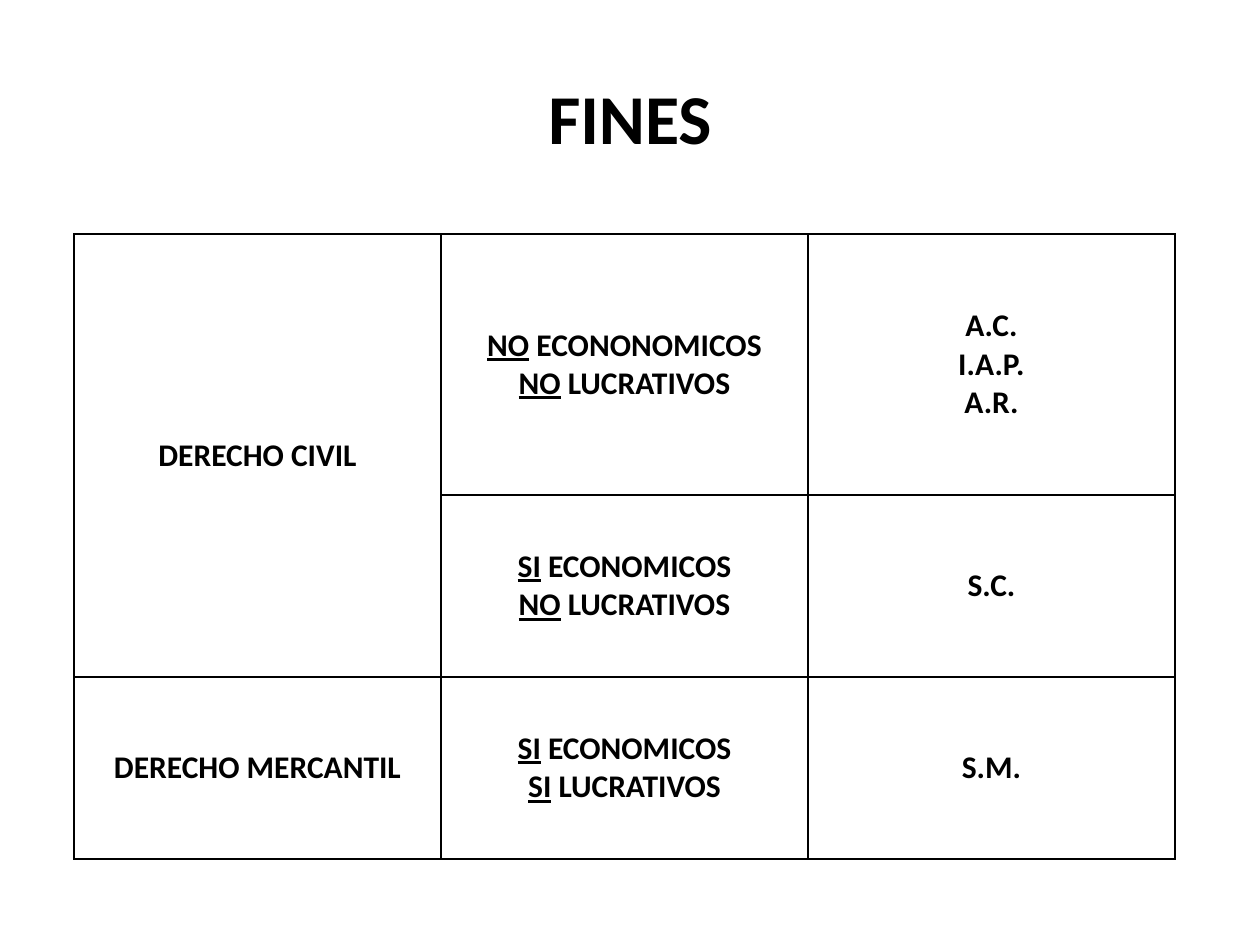
from lxml.etree import SubElement
from pptx import Presentation
from pptx.dml.color import RGBColor
from pptx.enum.text import MSO_ANCHOR, PP_ALIGN
from pptx.oxml.ns import qn
from pptx.util import Pt

EMU_PER_PX = 914400 / 126
SLIDE_SIZE = (1260, 945)
TITLE_BOX = (63, 38, 1134, 158)
TABLE_CORNER = (74, 234)
COLUMN_WIDTHS = [367] * 3
ROW_HEIGHTS = [261, 182, 182]

# Each cell is a list of lines; each line is (underlined word, plain text).
PURPOSES = [
    [[("", "DERECHO CIVIL")],
     [("NO", " ECONONOMICOS"), ("NO", " LUCRATIVOS")],
     [("", "A.C."), ("", "I.A.P."), ("", "A.R.")]],
    [[],
     [("SI", " ECONOMICOS"), ("NO", " LUCRATIVOS")],
     [("", "S.C.")]],
    [[("", "DERECHO MERCANTIL")],
     [("SI", " ECONOMICOS"), ("SI", " LUCRATIVOS")],
     [("", "S.M.")]],
]


def px(length):
    return round(length * EMU_PER_PX)


def color(hex_string):
    return RGBColor.from_string(hex_string)


class SlideBuilder:
    font_name = "Calibri"
    ink = "000000"
    paper = "FFFFFF"
    title_size = 40
    cell_size = 18
    border_width = 1

    def __init__(self, slide):
        self.slide = slide

    def style_run(self, run, size, underline=False):
        font = run.font
        font.name = self.font_name
        font.size = Pt(size)
        font.bold = True
        font.underline = underline
        font.color.rgb = color(self.ink)

    def write_lines(self, frame, lines, size):
        frame.text = "\n".join([""] * len(lines))
        for paragraph, (underlined, plain) in zip(frame.paragraphs, lines):
            paragraph.alignment = PP_ALIGN.CENTER
            for words, underline in ((underlined, True), (plain, False)):
                if words:
                    run = paragraph.add_run()
                    run.text = words
                    self.style_run(run, size, underline)

    def background(self):
        fill = self.slide.background.fill
        fill.solid()
        fill.fore_color.rgb = color(self.paper)

    def title(self, text, box):
        frame = self.slide.shapes.add_textbox(*map(px, box)).text_frame
        frame.word_wrap = True
        frame.vertical_anchor = MSO_ANCHOR.MIDDLE
        self.write_lines(frame, [("", text)], self.title_size)

    def border(self, cell):
        """Draw the four sides of a cell; call before filling it."""
        properties = cell._tc.get_or_add_tcPr()
        for side in ("a:lnL", "a:lnR", "a:lnT", "a:lnB"):
            line = SubElement(properties, qn(side), w=str(Pt(self.border_width)))
            fill = SubElement(line, qn("a:solidFill"))
            SubElement(fill, qn("a:srgbClr"), val=self.ink)

    def table(self, corner, widths, heights, rows):
        size = (sum(widths), sum(heights))
        table = self.slide.shapes.add_table(
            len(heights), len(widths), *map(px, corner + size)).table
        table.first_row = table.horz_banding = False
        for column, width in zip(table.columns, widths):
            column.width = px(width)
        for row, height in zip(table.rows, heights):
            row.height = px(height)
        for row_index, row in enumerate(rows):
            for column_index, lines in enumerate(row):
                cell = table.cell(row_index, column_index)
                cell.vertical_anchor = MSO_ANCHOR.MIDDLE
                self.border(cell)
                cell.fill.background()
                self.write_lines(cell.text_frame, lines, self.cell_size)
        return table


def main():
    presentation = Presentation()
    presentation.slide_width, presentation.slide_height = map(px, SLIDE_SIZE)
    builder = SlideBuilder(
        presentation.slides.add_slide(presentation.slide_layouts[6]))
    builder.background()
    builder.title("FINES", TITLE_BOX)
    purposes = builder.table(
        TABLE_CORNER, COLUMN_WIDTHS, ROW_HEIGHTS, PURPOSES)
    purposes.cell(0, 0).merge(purposes.cell(1, 0))
    presentation.save("out.pptx")


if __name__ == "__main__":
    main()
